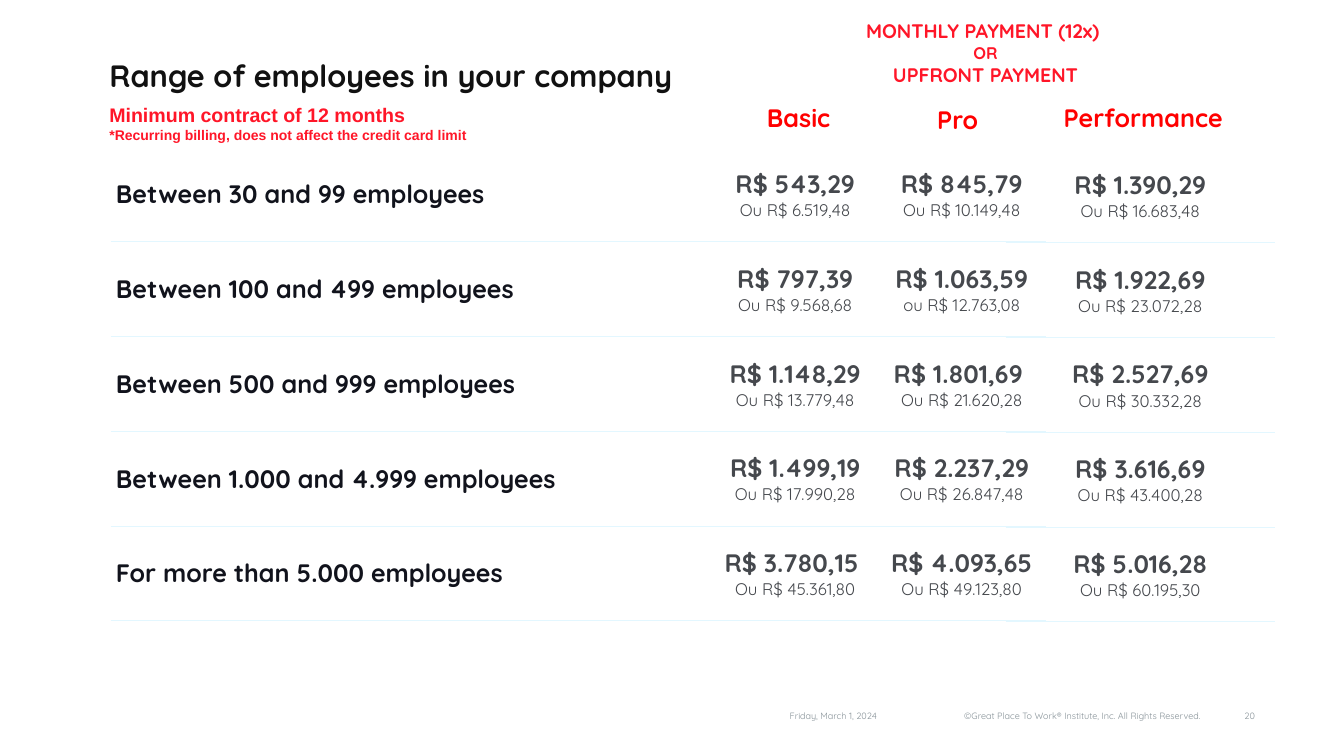
from lxml.etree import fromstring
from pptx import Presentation
from pptx.dml.color import RGBColor as RGB
from pptx.enum.text import MSO_ANCHOR as Anchor, MSO_AUTO_SIZE as Auto, PP_ALIGN as Align
from pptx.util import Cm, Pt

HUE = {"ink": "11131C", "title": "111111", "price": "45484D", "red": "FF0000",
       "rose": "FF1628", "foot": "879298", "line": "E3F7FF"}
NS = "http://schemas.openxmlformats.org/drawingml/2006/main"


def write(frame, lines, hue, align=Align.LEFT, face="Quicksand"):
    for i, (text, size, bold) in enumerate(lines):
        para = frame.paragraphs[0] if i == 0 else frame.add_paragraph()
        para.text = text
        para.alignment = align
        font = para.font
        font.name, font.size, font.bold = face, Pt(size), bold
        font.color.rgb = RGB.from_string(HUE[hue])


def rule(cell, sides):
    cell.fill.background()
    props = cell._tc.get_or_add_tcPr()
    solid = f'<a:solidFill><a:srgbClr val="{HUE["line"]}"/></a:solidFill>'
    for i, side in enumerate(["lnL", "lnR", "lnT", "lnB"]):
        fill = solid if side in sides else "<a:noFill/>"
        props.insert(i, fromstring(
            f'<a:{side} xmlns:a="{NS}" w="{Pt(1.5)}">{fill}</a:{side}>'))


deck = Presentation()
deck.slide_width, deck.slide_height = Cm(67.74), Cm(38.1)
slide = deck.slides.add_slide(deck.slide_layouts[6])
shapes = slide.shapes

ranges = ["Between 30 and 99 employees", "Between 100 and 499 employees",
          "Between 500 and 999 employees", "Between 1.000 and 4.999 employees",
          "For more than 5.000 employees"]
basic = [("R$ 543,29", "Ou R$ 6.519,48"), ("R$ 797,39", "Ou R$ 9.568,68"),
         ("R$ 1.148,29", "Ou R$ 13.779,48"), ("R$ 1.499,19", "Ou R$ 17.990,28"),
         ("R$ 3.780,15 ", "Ou R$ 45.361,80")]
pro = [("R$ 845,79", "Ou R$ 10.149,48"), ("R$ 1.063,59", "ou R$ 12.763,08"),
       ("R$ 1.801,69 ", "Ou R$ 21.620,28"), ("R$ 2.237,29", "Ou R$ 26.847,48"),
       ("R$ 4.093,65", "Ou R$ 49.123,80")]
top = [("R$ 1.390,29", "Ou R$ 16.683,48"), ("R$ 1.922,69", "Ou R$ 23.072,28"),
       ("R$ 2.527,69", "Ou R$ 30.332,28"), ("R$ 3.616,69", "Ou R$ 43.400,28"),
       ("R$ 5.016,28", "Ou R$ 60.195,30")]

tall = 4.78
grids = [(5.59, 7.39, [30.33, 8.31, 8.48], [ranges, basic, pro]),
         (50.7, 7.44, [13.54], [top])]
for left, y, widths, data in grids:
    count = len(ranges)
    table = shapes.add_table(count, len(widths), Cm(left), Cm(y),
                             Cm(sum(widths)), Cm(tall * count)).table
    table.first_row = table.horz_banding = False
    for row in table.rows:
        row.height = Cm(tall)
    for c, (width, items) in enumerate(zip(widths, data)):
        table.columns[c].width = Cm(width)
        for r, item in enumerate(items):
            cell = table.cell(r, c)
            cell.vertical_anchor = Anchor.MIDDLE
            if items is ranges:
                write(cell.text_frame, [(item, 36, True)], "ink")
            else:
                cell.margin_left = cell.margin_right = cell.margin_top = Cm(0.03)
                cell.margin_bottom = 0
                price, total = item
                write(cell.text_frame, [(price, 36, True), (total, 24, False)],
                      "price", Align.CENTER)
            rule(cell, ["lnT", "lnB"] if r else ["lnB"])

mid, end = Align.CENTER, Align.RIGHT
heads = [
    (5.26, 2.74, 32, 2.13, [("Range of employees in your company", 44, True)],
     "title", Align.LEFT, "Quicksand"),
    (36.96, 5.05, 6.58, 1.8, [("Basic", 36, True)], "red", mid, "Quicksand"),
    (44.98, 5.13, 6.58, 1.8, [("Pro", 36, True)], "red", mid, "Quicksand"),
    (52.96, 5.05, 9.32, 1.8, [("Performance", 36, True)], "red", mid, "Quicksand"),
    (5.26, 5.05, 27.81, 2.31,
     [("Minimum contract of 12 months", 28, True),
      ("*Recurring billing, does not affect the credit card limit", 20, True)],
     "rose", Align.LEFT, "Arial"),
    (37.87, 0.84, 23.6, 3.68,
     [("MONTHLY PAYMENT (12x) ", 28, True), ("OR", 24, True),
      ("UPFRONT PAYMENT", 28, True)], "rose", mid, "Quicksand"),
]
feet = [(29.64, 14.81, "Friday, March 1, 2024"),
        (45.26, 15.49, "©Great Place To Work® Institute, Inc. All Rights Reserved."),
        (61.47, 2.03, "20")]
for x, w, text in feet:
    heads.append((x, 35.76, w, 0.64, [(text, 13, False)], "foot", end, "Quicksand"))

for x, y, w, h, lines, hue, align, face in heads:
    frame = shapes.add_textbox(Cm(x), Cm(y), Cm(w), Cm(h)).text_frame
    frame.word_wrap = True
    if hue == "foot":
        frame.vertical_anchor = Anchor.MIDDLE
    else:
        frame.auto_size = Auto.SHAPE_TO_FIT_TEXT
    write(frame, lines, hue, align, face)

deck.save("out.pptx")
